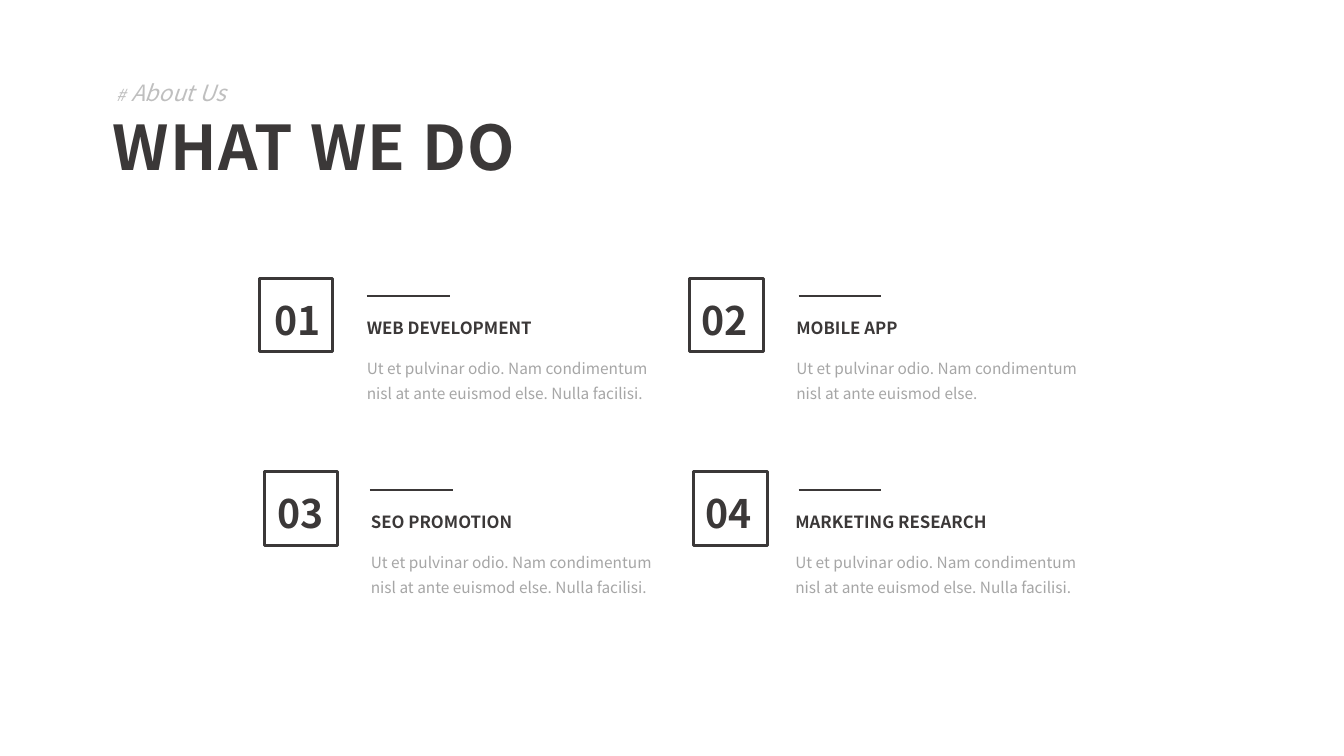
from lxml import etree
from pptx import Presentation
from pptx.dml.color import RGBColor
from pptx.enum.shapes import MSO_CONNECTOR, MSO_SHAPE
from pptx.enum.text import MSO_ANCHOR, MSO_AUTO_SIZE, PP_ALIGN
from pptx.oxml.ns import qn
from pptx.util import Inches, Pt

TITLE = "WHAT WE DO"
LABEL = [("#", 12), (" ", 20), ("About Us", 16)]
SHORT = "Ut et pulvinar odio. Nam condimentum nisl at ante euismod else."
LONG = SHORT + " Nulla facilisi."
# number, heading, description, then left edges of square, number, rule and text
SERVICES = [
    ("01", "WEB DEVELOPMENT", LONG, 2.57, 2.62, 3.64, 3.54),
    ("02", "MOBILE APP", SHORT, 6.84, 6.86, 7.92, 7.8),
    ("03", "SEO PROMOTION", LONG, 2.62, 2.65, 3.67, 3.58),
    ("04", "MARKETING RESEARCH", LONG, 6.88, 6.9, 7.92, 7.79),
]
COLUMNS = 2
FIRST_ROW, ROW_STEP = 2.76, 1.92
SQUARE, RULE_WIDTH = 0.73, 0.82
RULE_DROP, TEXT_DROP = 0.18, 0.37

FONT = "Noto Sans CJK SC"
DARK = RGBColor(0x3B, 0x38, 0x38)
GREY = RGBColor(0xA6, 0xA6, 0xA6)
PALE = RGBColor(0xBF, 0xBF, 0xBF)
LEFT, TOP = PP_ALIGN.LEFT, MSO_ANCHOR.TOP
NO_FIT = MSO_AUTO_SIZE.NONE
RECTANGLE, STRAIGHT = MSO_SHAPE.RECTANGLE, MSO_CONNECTOR.STRAIGHT


def place(box, left, top, width, height):
    box.left, box.top = Inches(left), Inches(top)
    box.width, box.height = Inches(width), Inches(height)


def prepare(frame):
    frame.word_wrap = True
    frame.auto_size = NO_FIT
    frame.vertical_anchor = TOP
    return frame


def add_text(shapes, left, top, width, height):
    box = shapes.add_textbox(*map(Inches, (left, top, width, height)))
    return prepare(box.text_frame)


def format_para(para, size, color, bold=False, line=0.9, before=10):
    para.alignment = LEFT
    para.line_spacing = line
    para.space_before = Pt(before)
    for span in para.runs:
        span.font.name = FONT
        span.font.size = Pt(size)
        span.font.bold = bold
        span.font.color.rgb = color


def add_badge(shapes, number, square_left, number_left, top):
    """Group a number with its outlined square."""
    badge = shapes.add_group_shape().shapes
    frame = add_text(badge, number_left, top + RULE_DROP, 0.75, 0.44)
    frame.text = number
    format_para(frame.paragraphs[0], 28, DARK, bold=True)
    square = badge.add_shape(RECTANGLE, Inches(square_left), Inches(top),
                             Inches(SQUARE), Inches(SQUARE))
    square.shadow.inherit = False
    square.fill.background()
    square.line.color.rgb = DARK
    square.line.width = Pt(2.25)


def add_rule(shapes, left, top):
    rule = shapes.add_connector(STRAIGHT, Inches(left), Inches(top),
                                Inches(left + RULE_WIDTH), Inches(top))
    rule.line.color.rgb = DARK
    rule.line.width = Pt(1.5)
    etree.SubElement(rule._element.spPr, qn("a:effectLst"))


def add_description(shapes, heading, description, left, top):
    frame = add_text(shapes, left, top, 3.07, 1.72)
    frame.text = heading
    format_para(frame.paragraphs[0], 12, DARK, bold=True)
    para = frame.add_paragraph()
    para.text = description
    format_para(para, 11, GREY, line=Pt(18))


def main():
    deck = Presentation()
    deck.slide_width, deck.slide_height = Inches(13.33), Inches(7.5)
    slide = deck.slides.add_slide(deck.slide_layouts.get_by_name("Title Only"))
    shapes = slide.shapes

    title = shapes.title
    place(title, 1.02, 1.11, 8.1, 0.79)
    prepare(title.text_frame).text = TITLE
    para = title.text_frame.paragraphs[0]
    format_para(para, 44, DARK, bold=True, before=0)
    para.runs[0]._r.get_or_add_rPr().set("spc", "100")

    for index, service in enumerate(SERVICES):
        number, heading, description, square, digits, rule, text = service
        top = FIRST_ROW + index // COLUMNS * ROW_STEP
        add_description(shapes, heading, description, text, top + TEXT_DROP)
        add_badge(shapes, number, square, digits, top)
        add_rule(shapes, rule, top + RULE_DROP)

    para = add_text(shapes, 1.05, 0.76, 4.33, 0.41).paragraphs[0]
    for words, _ in LABEL:
        para.add_run().text = words
    format_para(para, 16, PALE, line=Pt(18), before=12)
    for span, (_, size) in zip(para.runs, LABEL):
        span.font.size = Pt(size)
        span.font.italic = True

    deck.save("out.pptx")


if __name__ == "__main__":
    main()
